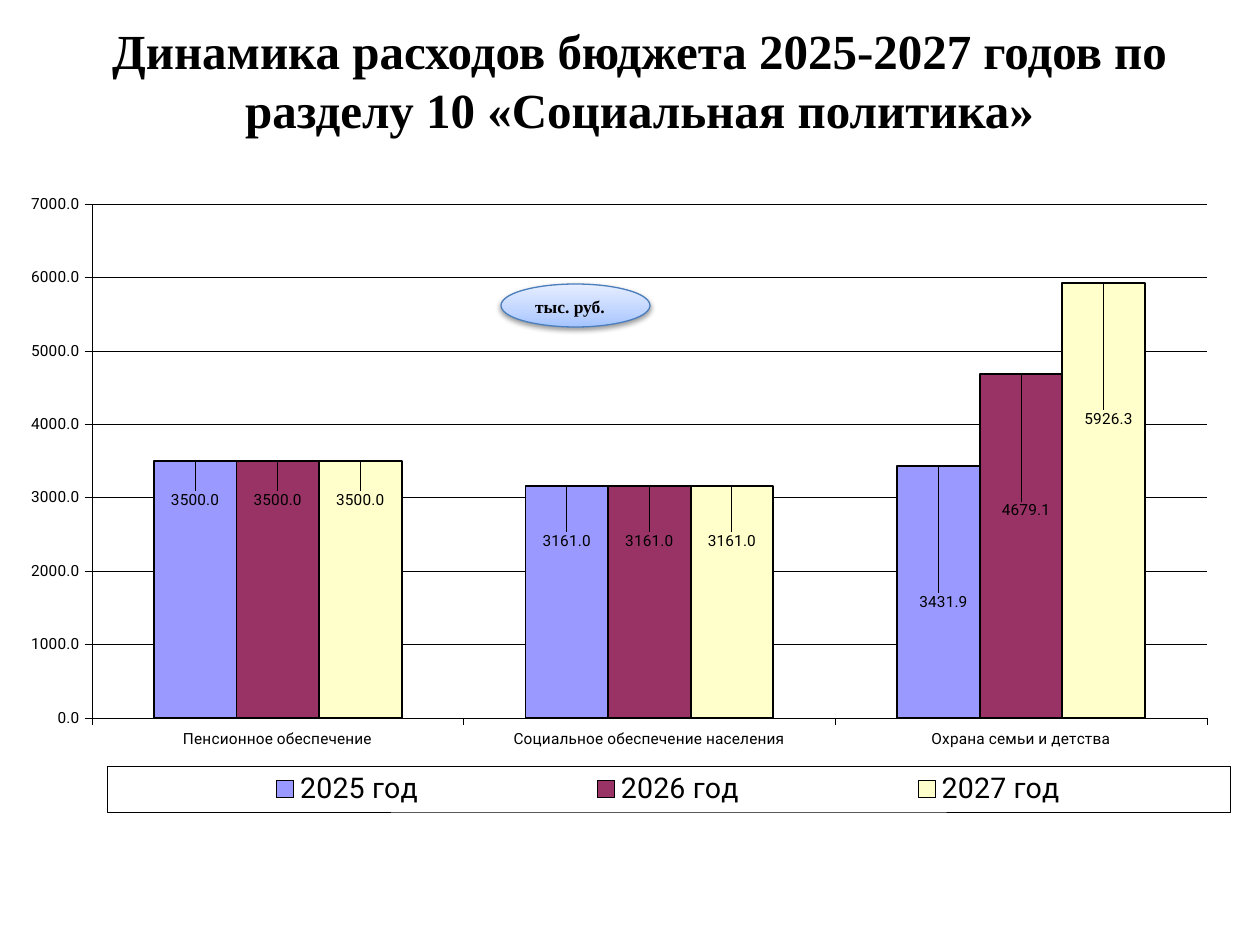
from copy import deepcopy
from dataclasses import dataclass

from lxml import etree
from pptx import Presentation
from pptx import util as u
from pptx.chart.data import CategoryChartData
from pptx.dml.color import RGBColor
from pptx.enum import chart as ch, shapes, text
from pptx.oxml import parse_xml
from pptx.oxml.ns import nsdecls, qn

EMU_PER_PX = 914400 / 126


@dataclass(frozen=True)
class Theme:
    ink: RGBColor = RGBColor(0, 0, 0)
    badge_line: RGBColor = RGBColor.from_string("4B7EBC")
    badge_stops: tuple = ((0, "A4C4FF"), (0.35, "BFD4FF"), (1, "E6EEFF"))
    serif: str = "Times New Roman"
    sans: str = "Roboto"
    title: float = 28
    badge: float = 10
    axis: float = 8.8
    legend: float = 16.3
    value: float = 14.7
    hairline: float = 0.28
    bar_line: float = 1.11


@dataclass(frozen=True)
class Box:
    x: int
    y: int
    w: int
    h: int

    def emu(self) -> tuple:
        return tuple(px(v) for v in (self.x, self.y, self.w, self.h))


@dataclass(frozen=True)
class Series:
    name: str
    color: str
    values: tuple


@dataclass(frozen=True)
class Category:
    """A budget line and the shift of its value labels from the bar tops."""
    name: str
    dx: int
    dy: int


THEME = Theme()
CHART = Box(8, 181, 1225, 634)
PLOT = Box(92, 204, 1115, 514)
LEGEND = Box(107, 766, 1123, 46)
TITLE = Box(63, 53, 1153, 53)
BADGE = Box(501, 284, 149, 43)

CATEGORIES = (
    Category("Пенсионное обеспечение", 0, 25),
    Category("Социальное обеспечение населения", 0, 41),
    Category("Охрана семьи и детства", 5, 122),
)
SERIES = (
    Series("2025 год", "9999FF", (3500, 3161, 3431.9)),
    Series("2026 год", "993366", (3500, 3161, 4679.1)),
    Series("2027 год", "FFFFCC", (3500, 3161, 5926.3)),
)


def px(n: float) -> int:
    return round(n * EMU_PER_PX)


def style_font(font, face: str, size: float, bold: bool = False) -> None:
    font.name, font.size, font.bold = face, u.Pt(size), bold
    font.color.rgb = THEME.ink


def style_line(line, width: float, color: RGBColor = THEME.ink) -> None:
    line.color.rgb = color
    line.width = u.Pt(width)


def layout_xml(x: float, y: float, box: Box = None, inner: bool = False):
    """Manual chart layout; without a box, x and y are offsets."""
    rows = [("layoutTarget", "inner")] if inner else []
    if box:
        rows += [("xMode", "edge"), ("yMode", "edge")]
    rows += [("x", round(x / CHART.w, 4)), ("y", round(y / CHART.h, 4))]
    if box:
        rows += [("w", round(box.w / CHART.w, 4)), ("h", round(box.h / CHART.h, 4))]
    body = "".join(f'<c:{tag} val="{val}"/>' for tag, val in rows)
    return parse_xml(f'<c:layout {nsdecls("c")}><c:manualLayout>{body}'
                     '</c:manualLayout></c:layout>')


def place(parent, box: Box, after: str = None, inner: bool = False) -> None:
    for old in parent.findall(qn("c:layout")):
        parent.remove(old)
    layout = layout_xml(box.x - CHART.x, box.y - CHART.y, box, inner)
    if after:
        parent.find(qn(after)).addnext(layout)
    else:
        parent.insert(0, layout)


def style_axis(axis) -> None:
    axis.major_tick_mark = ch.XL_TICK_MARK.OUTSIDE
    axis.minor_tick_mark = ch.XL_TICK_MARK.NONE
    style_font(axis.tick_labels.font, THEME.sans, THEME.axis)
    style_line(axis.format.line, THEME.hairline)


def add_value_labels(series) -> None:
    """Upright value labels, shifted down into the bars by category."""
    labels = series.data_labels
    labels.show_value = True
    labels.number_format, labels.number_format_is_linked = "0.0", False
    labels.position = ch.XL_LABEL_POSITION.INSIDE_END
    style_font(labels.font, THEME.sans, THEME.value)
    root = labels._element
    txt, fmt = root.find(qn("c:txPr")), root.find(qn("c:numFmt"))
    body = txt.find(qn("a:bodyPr"))
    body.set("rot", "-5400000")
    body.set("vert", "horz")
    for i, cat in enumerate(CATEGORIES):
        series.points[i].data_label.position = ch.XL_LABEL_POSITION.INSIDE_END
        label = root.findall(qn("c:dLbl"))[i]
        parts = (layout_xml(cat.dx, cat.dy), deepcopy(fmt), deepcopy(txt))
        for pos, part in enumerate(parts, 1):
            label.insert(pos, part)


def add_budget_chart(s) -> None:
    data = CategoryChartData(number_format="0.0")
    data.categories = [c.name for c in CATEGORIES]
    for item in SERIES:
        data.add_series(item.name, item.values)
    chart = s.shapes.add_chart(ch.XL_CHART_TYPE.COLUMN_CLUSTERED,
                               *CHART.emu(), data).chart
    chart.has_title = False
    style_font(chart.font, THEME.sans, THEME.axis)
    style_axis(chart.category_axis)
    chart.category_axis.tick_label_position = ch.XL_TICK_LABEL_POSITION.LOW
    axis = chart.value_axis
    style_axis(axis)
    axis.minimum_scale, axis.maximum_scale, axis.major_unit = 0, 7000, 1000
    axis.tick_labels.number_format = "0.0"
    axis.tick_labels.number_format_is_linked = False
    style_line(axis.major_gridlines.format.line, THEME.hairline)

    plot = chart.plots[0]
    plot.gap_width, plot.overlap, plot.vary_by_categories = 150, 0, False
    for series, item in zip(plot.series, SERIES):
        series.format.fill.solid()
        series.format.fill.fore_color.rgb = RGBColor.from_string(item.color)
        style_line(series.format.line, THEME.bar_line)
        add_value_labels(series)

    chart.has_legend = True
    legend = chart.legend
    legend.position = ch.XL_LEGEND_POSITION.BOTTOM
    legend.include_in_layout = False
    style_font(legend.font, THEME.sans, THEME.legend)
    place(legend._element, LEGEND, after="c:legendPos")
    frame = parse_xml(f'<c:spPr {nsdecls("c", "a")}><a:noFill/><a:ln w="3600">'
                      f'<a:solidFill><a:srgbClr val="{THEME.ink}"/></a:solidFill>'
                      '</a:ln></c:spPr>')
    legend._element.find(qn("c:txPr")).addprevious(frame)
    place(chart._chartSpace.find(".//" + qn("c:plotArea")), PLOT, inner=True)


def add_title(s) -> None:
    sp = s.shapes.title
    sp.left, sp.top, sp.width, sp.height = TITLE.emu()
    tf = sp.text_frame
    tf.text = "Динамика расходов бюджета 2025-2027 годов по разделу 10 «Социальная политика»"
    tf.word_wrap, tf.auto_size = True, text.MSO_AUTO_SIZE.NONE
    tf.vertical_anchor = text.MSO_ANCHOR.MIDDLE
    p = tf.paragraphs[0]
    p.alignment = text.PP_ALIGN.CENTER
    style_font(p.runs[0].font, THEME.serif, THEME.title, bold=True)


def add_unit_badge(s) -> None:
    sp = s.shapes.add_shape(shapes.MSO_SHAPE.OVAL, *BADGE.emu())
    sp.fill.gradient()
    sp.fill.gradient_angle = 90
    first = sp.fill.gradient_stops[0]._gs
    first.addnext(deepcopy(first))
    for stop, (pos, color) in zip(sp.fill.gradient_stops, THEME.badge_stops):
        stop.position, stop.color.rgb = pos, RGBColor.from_string(color)
    style_line(sp.line, 0.75, THEME.badge_line)
    sp.shadow.inherit = False
    effects = sp._element.spPr.find(qn("a:effectLst"))
    shadow = etree.SubElement(effects, qn("a:outerShdw"), blurRad="39370",
                              dist="20320", dir="5400000", rotWithShape="0")
    color = etree.SubElement(shadow, qn("a:srgbClr"), val=str(THEME.ink))
    etree.SubElement(color, qn("a:alpha"), val="38000")
    tf = sp.text_frame
    tf.text = "тыс. руб."
    tf.vertical_anchor = text.MSO_ANCHOR.TOP
    p = tf.paragraphs[0]
    p.alignment = text.PP_ALIGN.LEFT
    style_font(p.runs[0].font, THEME.serif, THEME.badge, bold=True)


def main() -> None:
    prs = Presentation()
    prs.slide_width, prs.slide_height = u.Inches(10), u.Inches(7.5)
    s = prs.slides.add_slide(prs.slide_layouts[5])
    add_budget_chart(s)
    add_title(s)
    add_unit_badge(s)
    prs.save("out.pptx")


if __name__ == "__main__":
    main()
